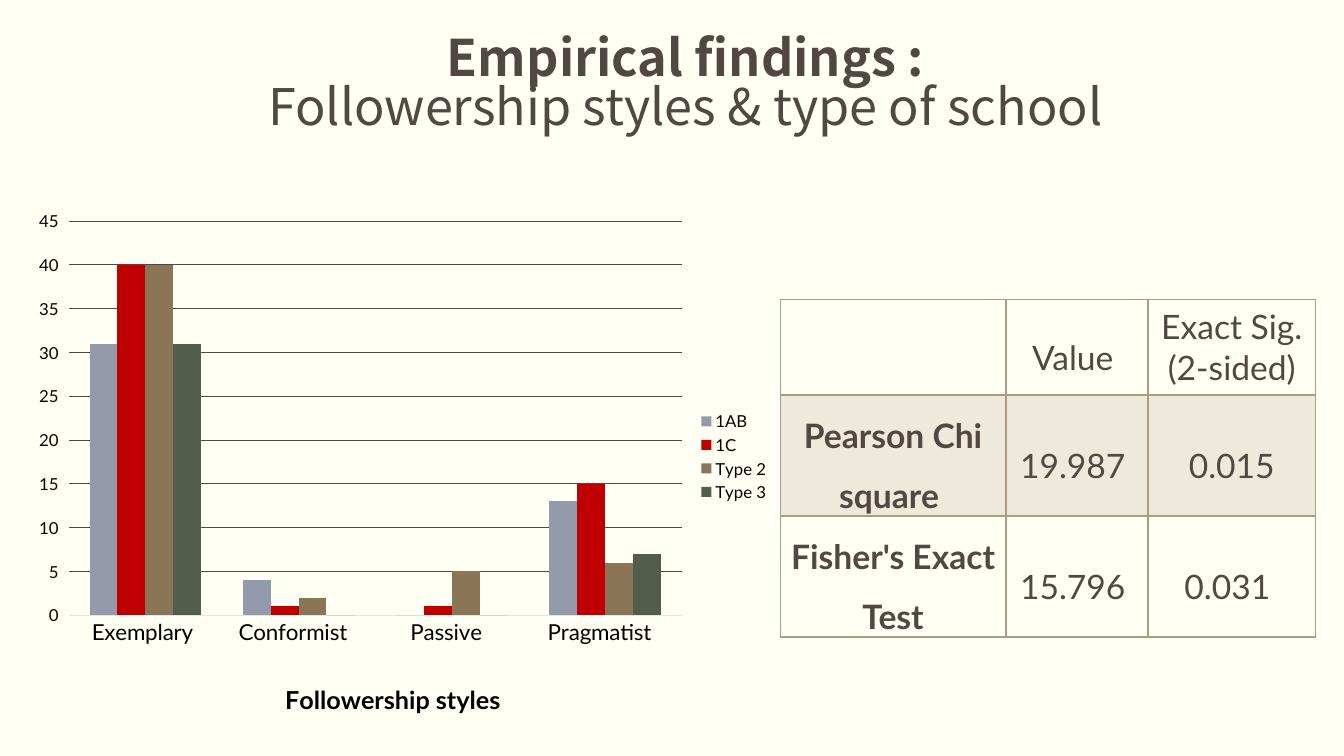
import pptx
import pptx.chart.data
import pptx.dml.color
import pptx.enum.chart
import pptx.enum.text
import pptx.oxml
import pptx.oxml.ns
import pptx.util

Pt = pptx.util.Pt
RGBColor = pptx.dml.color.RGBColor
PP_ALIGN = pptx.enum.text.PP_ALIGN
ANCHOR = pptx.enum.text.MSO_ANCHOR
XL = pptx.enum.chart

IVORY = RGBColor(0xFF, 0xFF, 0xF3)
UMBER = RGBColor(0x51, 0x48, 0x43)
TAN = RGBColor(0xAE, 0x9A, 0x7E)
BLACK = RGBColor(0, 0, 0)
PALE = RGBColor(0xE6, 0xE3, 0xE1)
BLUE_GREY = RGBColor(0x92, 0x9A, 0xAB)
RED = RGBColor(0xC0, 0, 0)
BROWN = RGBColor(0x8A, 0x75, 0x57)
GREEN = RGBColor(0x52, 0x5E, 0x4C)

STYLES = ["Exemplary ", "Conformist  ", "Passive  ", "Pragmatist  "]
SCHOOLS = [
    ("1AB", (31, 4, 0, 13), BLUE_GREY),
    ("1C", (40, 1, 1, 15), RED),
    ("Type 2", (40, 2, 5, 6), BROWN),
    ("Type 3", (31, 0, 0, 7), GREEN),
]
TESTS = [
    ("", "Value ", "Exact Sig. (2-sided)"),
    ("Pearson Chi square ", "19.987 ", "0.015"),
    ("Fisher's Exact Test", "15.796 ", "0.031 "),
]


def set_font(font, size, color=BLACK, name="Lato", bold=False):
    font.size, font.name, font.bold = Pt(size), name, bold
    font.color.rgb = color


def write(paragraph, text, spacing=1.0, **style):
    paragraph.alignment = PP_ALIGN.CENTER
    paragraph.line_spacing = spacing
    run = paragraph.add_run()
    run.text = text
    set_font(run.font, **style)


def xml(source):
    return pptx.oxml.parse_xml(source.replace(">", " " + pptx.oxml.ns.nsdecls("a", "c") + ">", 1))


def add_heading(slide, left, top, width, height):
    frame = slide.shapes.add_textbox(Pt(left), Pt(top), Pt(width), Pt(height)).text_frame
    frame.word_wrap = True
    frame.vertical_anchor = ANCHOR.MIDDLE
    style = dict(spacing=0.82, size=36, color=UMBER, name="Noto Sans CJK KR")
    write(frame.paragraphs[0], "Empirical findings :", bold=True, **style)
    write(frame.add_paragraph(), "Followership styles & type of school", **style)


def manual_layout(target="", **fractions):
    parts = f'<c:layoutTarget val="{target}"/>' if target else ""
    parts += "".join(f'<c:{key}Mode val="edge"/>' for key in ("x", "y"))
    parts += "".join(f'<c:{key} val="{value}"/>' for key, value in fractions.items())
    return xml(f"<c:layout><c:manualLayout>{parts}</c:manualLayout></c:layout>")


def add_styles_chart(slide, left, top, width, height):
    data = pptx.chart.data.CategoryChartData()
    data.categories = STYLES
    for name, counts, _ in SCHOOLS:
        data.add_series(name, counts)
    chart = slide.shapes.add_chart(
        XL.XL_CHART_TYPE.COLUMN_CLUSTERED, Pt(left), Pt(top), Pt(width), Pt(height), data
    ).chart
    set_font(chart.font, 10, UMBER)
    chart.has_title = False
    chart.has_legend = True
    chart.legend.position = XL.XL_LEGEND_POSITION.RIGHT
    chart.legend.include_in_layout = False
    set_font(chart.legend.font, 12)

    plot = chart.plots[0]
    plot.gap_width, plot.overlap, plot.vary_by_categories = 150, 0, False
    for series, (_, _, color) in zip(plot.series, SCHOOLS):
        series.format.fill.solid()
        series.format.fill.fore_color.rgb = color

    styles, counts = chart.category_axis, chart.value_axis
    set_font(styles.tick_labels.font, 16)
    styles.major_tick_mark = XL.XL_TICK_MARK.NONE
    styles.format.line.color.rgb = PALE
    styles.format.line.width = Pt(0.75)
    caption = styles.axis_title
    write(caption.text_frame.paragraphs[0], "Followership styles", size=18, bold=True)

    set_font(counts.tick_labels.font, 12)
    counts.minimum_scale, counts.maximum_scale, counts.major_unit = 0, 45, 5
    counts.major_tick_mark = XL.XL_TICK_MARK.OUTSIDE
    counts.format.line.fill.background()
    counts.major_gridlines.format.line.color.rgb = UMBER
    counts.major_gridlines.format.line.width = Pt(0.75)

    layouts = [
        (caption._element, 1, manual_layout(x=0.34, y=0.93)),
        (chart._chartSpace.chart.plotArea, 0, manual_layout("inner", x=0.06, y=0.04, w=0.81, h=0.77)),
    ]
    for part, position, layout in layouts:
        for old in part.findall(pptx.oxml.ns.qn("c:layout")):
            part.remove(old)
        part.insert(position, layout)


def border_cell(cell, row):
    """Draw the four borders of a cell, heavier under the header row."""
    properties = cell._tc.get_or_add_tcPr()
    heavy = {0: "B", 1: "T"}.get(row)
    for position, side in enumerate("LRTB"):
        weight = Pt(2 if side == heavy else 1)
        properties.insert(position, xml(
            f'<a:ln{side} w="{weight}"><a:solidFill><a:srgbClr val="{TAN}"/></a:solidFill></a:ln{side}>'
        ))


def add_tests_table(slide, left, top, widths, heights):
    table = slide.shapes.add_table(
        len(heights), len(widths), Pt(left), Pt(top), Pt(sum(widths)), Pt(sum(heights))
    ).table
    table.first_row = table.horz_banding = False
    for column, width in zip(table.columns, widths):
        column.width = Pt(width)
    for r, (line, height) in enumerate(zip(TESTS, heights)):
        table.rows[r].height = Pt(height)
        for c, text in enumerate(line):
            cell = table.cell(r, c)
            cell.margin_left = cell.margin_right = Pt(5)
            cell.margin_top = cell.margin_bottom = 0
            cell.vertical_anchor = ANCHOR.MIDDLE if c else ANCHOR.TOP
            if text:
                spacing = 1.0 if (r, c) == (0, 2) else 1.5
                write(cell.text_frame.paragraphs[0], text, spacing, size=24, color=UMBER, bold=c == 0)
            if r == 1:
                cell.fill.solid()
                cell.fill.fore_color.rgb = TAN
                tint = cell._tc.tcPr.find(".//" + pptx.oxml.ns.qn("a:srgbClr"))
                tint.append(xml('<a:alpha val="20000"></a:alpha>'))
            else:
                cell.fill.background()
            border_cell(cell, r)


def main():
    deck = pptx.Presentation()
    deck.slide_width, deck.slide_height = Pt(960), Pt(540)
    slide = deck.slides.add_slide(deck.slide_layouts[6])
    slide.background.fill.solid()
    slide.background.fill.fore_color.rgb = IVORY
    add_heading(slide, 25.9, 14.4, 927.4, 94.3)
    add_styles_chart(slide, 16.6, 143.3, 540.7, 372.2)
    add_tests_table(slide, 557.3, 213.8, (161.3, 101.5, 119.5), (68.4, 86.4, 86.4))
    deck.save("out.pptx")


if __name__ == "__main__":
    main()
